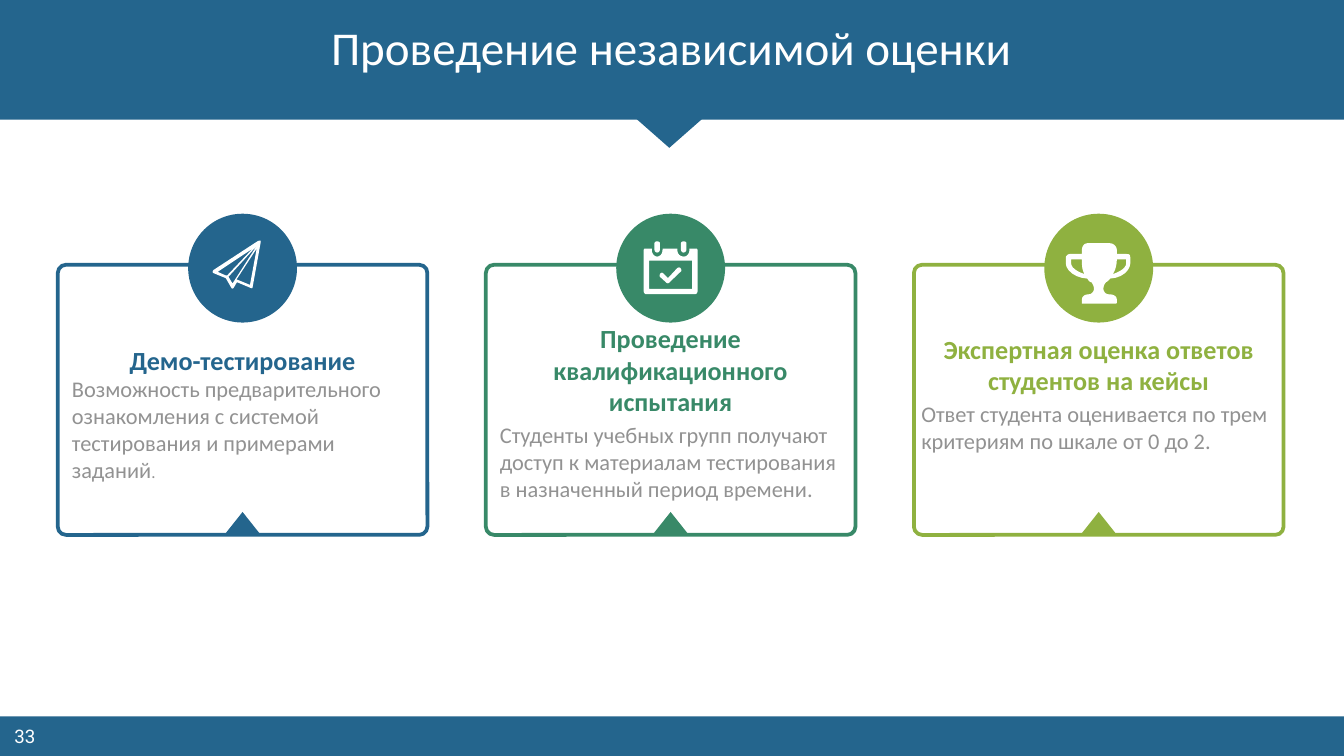
from pptx import Presentation, util as u
from pptx.dml.color import RGBColor
from pptx.enum import shapes, text

BLUE, GREEN, LIME = "24658D", "388968", "8FB140"
WHITE, GREY = "FFFFFF", "929292"
KIND = shapes.MSO_SHAPE
ALIGN = text.PP_ALIGN
FIRST_LEFT, LAST_LEFT, CARD_WIDTH = 0.43, 6.8, 2.75

PLANE = [
    [(193.5, 179), (192, 179.3), (158.8, 201), (158, 202, 158, 203, 159, 203.3),
     (168, 207), (172, 214), (172.3, 215, 173.5, 215, 174, 214), (176.3, 210),
     (187, 214.5), (187.5, 214.7, 188, 214.3, 188, 213.5), (194, 180),
     (194, 179.5, 194, 179, 193.5, 179)],
    [(162, 202.3), (188, 185), (169, 205), (168, 205)],
    [(170, 206), (191, 183), (173, 211)],
    [(186, 212), (177, 208.3), (176, 208), (191, 185)],
]
CALENDAR = [
    [(517, 219), (481, 219), (480, 219, 479, 218, 479, 217), (479, 186),
     (479, 185, 480, 185, 481, 185), (485, 185), (485, 186),
     (485, 189, 487, 191, 489, 191), (491, 191, 493, 189, 493, 186), (493, 185),
     (504, 185), (504, 186), (504, 189, 506, 191, 509, 191),
     (511, 191, 513, 189, 513, 186), (513, 185), (517, 185),
     (518, 185, 519, 185, 519, 186), (519, 217), (519, 218, 518, 219, 517, 219)],
    [(515, 194), (483, 194), (483, 215), (515, 215)],
    [(492.5, 203), (493, 203, 493.4, 203.3, 494, 204), (497, 207), (504, 199.5),
     (505, 199, 505.4, 199, 506, 199.3), (507, 200, 507, 201, 507, 201.7),
     (498, 210.3), (497.4, 211, 496.6, 211, 496, 210.5), (491, 206),
     (490.6, 205, 491, 203.2, 492.5, 203)],
] + [
    [(x, 188), (x - 1, 188, x - 2, 187, x - 2, 186), (x - 2, 181),
     (x - 2, 180, x - 1, 179.7, x, 179.7), (x + 1, 179.7, x + 2, 180, x + 2, 181),
     (x + 2, 186), (x + 2, 187, x + 1, 188, x, 188)]
    for x in (489, 508.7)
]
TROPHY = [
    [(841, 196), (841, 201, 835, 207, 826, 207.3), (825, 209, 823, 210, 823, 210),
     (822, 211, 821, 213, 821, 215), (821, 216, 822, 219, 825, 219),
     (828, 219, 831, 220, 831, 223), (831, 225), (831, 226, 830, 226, 830, 226),
     (805, 226), (805, 226, 805, 226, 805, 225), (805, 223),
     (805, 220, 808, 219, 810, 219), (813, 219, 814, 216, 814, 215),
     (814, 213, 813, 211, 812, 210), (811, 210, 810, 209, 809, 207.3),
     (800, 207, 793, 201, 793, 196), (793, 192), (793, 190, 795, 189, 796, 189),
     (805, 189), (805, 186), (805, 183, 807, 181, 809, 181), (826, 181),
     (828, 181, 831, 183, 831, 186), (831, 189), (838, 189),
     (841, 189, 841, 190, 841, 192)],
    [(805, 193), (797, 193), (797, 196), (797, 199, 801, 202, 807, 204),
     (805, 201, 805, 197, 805, 193)],
    [(838, 193), (831, 193), (831, 197, 830, 201, 828, 204),
     (834, 202, 838, 199, 838, 196)],
]


def colour(code):
    return RGBColor.from_string(code)


def flatten(outline, steps=6):
    points = []
    for item in outline:
        if len(item) == 2:
            points.append(item)
            continue
        x0, y0 = points[-1]
        x1, y1, x2, y2, x3, y3 = item
        for step in range(1, steps + 1):
            t = step / steps
            s = 1 - t
            weights = s ** 3, 3 * s * s * t, 3 * s * t * t, t ** 3
            points.append(tuple(sum(w * v for w, v in zip(weights, values))
                                for values in ((x0, x1, x2, x3), (y0, y1, y2, y3))))
    return [(u.Inches(x / 100), u.Inches(y / 100)) for x, y in points]


class Painter:
    """Holds the text style and the current slide, and draws each kind of element."""

    def __init__(self, slide, font="Calibri"):
        self.shapes = slide.shapes
        self.font = font

    def finish(self, shape, fill=None, line=None):
        shape.shadow.inherit = False
        if fill:
            shape.fill.solid()
            shape.fill.fore_color.rgb = colour(fill)
        else:
            shape.fill.background()
        if line:
            shape.line.color.rgb = colour(line)
            shape.line.width = u.Pt(2)
        else:
            shape.line.fill.background()
        return shape

    def shape(self, kind, area, fill=None, line=None):
        shape = self.shapes.add_shape(kind, *map(u.Inches, area))
        return self.finish(shape, fill, line)

    def icon(self, outlines):
        first, *others = map(flatten, outlines)
        builder = self.shapes.build_freeform(*first[0], scale=1.0)
        builder.add_line_segments(first[1:], close=True)
        for points in others:
            builder.move_to(*points[0])
            builder.add_line_segments(points[1:], close=True)
        self.finish(builder.convert_to_shape(), WHITE)

    def text(self, area, paragraphs, anchor=text.MSO_ANCHOR.TOP, font=None, grow=True):
        box = self.shapes.add_textbox(*map(u.Inches, area))
        frame = box.text_frame
        frame.word_wrap = True
        frame.vertical_anchor = anchor
        frame.auto_size = (text.MSO_AUTO_SIZE.SHAPE_TO_FIT_TEXT if grow
                           else text.MSO_AUTO_SIZE.NONE)
        frame.margin_left = frame.margin_right = 0
        frame.margin_top = frame.margin_bottom = 0
        for index, (align, before, runs) in enumerate(paragraphs):
            para = frame.add_paragraph() if index else frame.paragraphs[0]
            para.alignment = align
            if before:
                para.space_before = u.Pt(before)
            for words, size, code, bold in runs:
                span = para.add_run()
                span.text = words
                span.font.name = font or self.font
                span.font.size = u.Pt(size)
                span.font.bold = bold
                span.font.color.rgb = colour(code)

    def card(self, left, code, heading, body, text_area, before, icon):
        middle = left + CARD_WIDTH / 2
        self.shape(KIND.ISOSCELES_TRIANGLE, (middle - 0.27 / 2, 3.81, 0.27, 0.17), code)
        frame = self.shape(KIND.ROUNDED_RECTANGLE, (left, 1.97, CARD_WIDTH, 2.01), line=code)
        frame.adjustments[0] = 0.03
        self.shape(KIND.OVAL, (middle - 0.81 / 2, 1.59, 0.81, 0.81), code)
        top, width, height = text_area
        self.text((middle - width / 2, top, width, height), [
            (ALIGN.CENTER, 0, [(heading, 14, code, True)]),
            (ALIGN.LEFT, before, [(words, size, GREY, False) for words, size in body]),
        ])
        self.icon(icon)


def main():
    deck = Presentation()
    deck.slide_width, deck.slide_height = u.Inches(10), u.Inches(10 * 9 / 16)
    page = Painter(deck.slides.add_slide(deck.slide_layouts[6]))

    page.shape(KIND.RECTANGLE, (0, 5.33, 10, 0.3), BLUE)
    page.text((0.02, 5.39, 0.33, 0.17), [(ALIGN.CENTER, 0, [("33", 10, WHITE, False)])],
              text.MSO_ANCHOR.MIDDLE, "Roboto")
    page.shape(KIND.RECTANGLE, (0, 0, 10, 0.89), BLUE)
    page.shape(KIND.ISOSCELES_TRIANGLE, (4.73, 0.88, 0.5, 0.22), BLUE).rotation = 180
    page.text((0.43, 0.14, 9.13, 0.37), [
        (ALIGN.CENTER, 0, [("Проведение независимой оценки", 25.2, WHITE, False)]),
    ], grow=False)

    cards = [
        (BLUE, "Демо-тестирование",
         [("Возможность предварительного ознакомления с системой тестирования "
           "и примерами заданий", 12), (".", 9)], (2.56, 2.54, 1.04), 0, PLANE),
        (GREEN, "Проведение квалификационного испытания",
         [("Студенты учебных групп получают доступ к материалам тестирования "
           "в назначенный период времени.", 12)], (2.4, 2.54, 1.35), 2.4, CALENDAR),
        (LIME, "Экспертная оценка ответов студентов на кейсы",
         [("Ответ студента оценивается по трем критериям по шкале от 0 до 2.", 12)],
         (2.48, 2.64, 0.92), 2.4, TROPHY),
    ]
    pitch = (LAST_LEFT - FIRST_LEFT) / (len(cards) - 1)
    for index, card in enumerate(cards):
        page.card(FIRST_LEFT + pitch * index, *card)

    deck.save("out.pptx")


if __name__ == "__main__":
    main()
